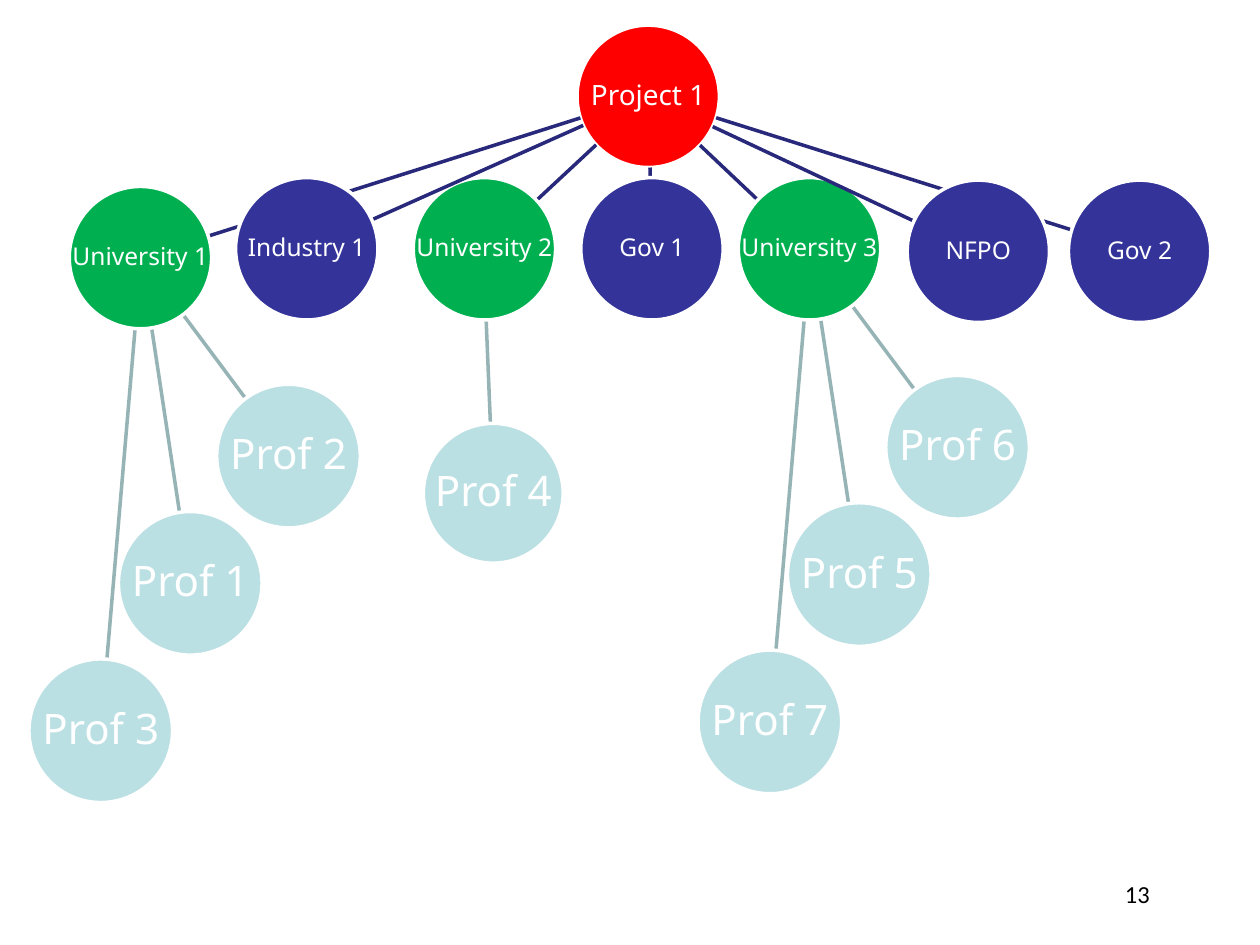
from math import hypot

from lxml.etree import SubElement
from pptx import Presentation
from pptx.dml.color import RGBColor
from pptx.enum.shapes import MSO_CONNECTOR, MSO_SHAPE
from pptx.enum.text import MSO_ANCHOR, PP_ALIGN
from pptx.oxml.ns import qn
from pptx.util import Inches, Pt

WHITE = RGBColor(0xFF, 0xFF, 0xFF)
BLACK = RGBColor(0x00, 0x00, 0x00)
RED = RGBColor(0xFF, 0x00, 0x00)
GREEN = RGBColor(0x00, 0xB0, 0x50)
BLUE = RGBColor(0x33, 0x33, 0x99)
NAVY = RGBColor(0x29, 0x29, 0x7B)
PALE_TEAL = RGBColor(0xBB, 0xE0, 0xE3)
GREY_TEAL = RGBColor(0x96, 0xB3, 0xB6)

deck = Presentation()
deck.slide_width, deck.slide_height = Inches(10), Inches(7.5)
page = deck.slides.add_slide(deck.slide_layouts[6])


def add_circle(label, corner, diameter, fill, size):
    left, top = corner
    circle = page.shapes.add_shape(
        MSO_SHAPE.OVAL, Inches(left), Inches(top), Inches(diameter), Inches(diameter))
    circle.shadow.inherit = False
    circle.fill.solid()
    circle.fill.fore_color.rgb = fill
    circle.line.color.rgb = WHITE
    circle.line.width = Pt(2)
    frame = circle.text_frame
    frame.word_wrap = False
    frame.vertical_anchor = MSO_ANCHOR.MIDDLE
    frame.margin_left = frame.margin_right = Inches(0.01)
    frame.margin_top = frame.margin_bottom = Inches(0.01)
    para = frame.paragraphs[0]
    para.alignment = PP_ALIGN.CENTER
    para.line_spacing = 0.9
    span = para.add_run()
    span.text = label
    span.font.name = "Noto Sans"
    span.font.size = Pt(size)
    span.font.color.rgb = WHITE


def add_link(start, end, diameter, color):
    """Join two circles of one size, given by their corners, from rim to rim."""
    radius = diameter / 2
    x1, y1, x2, y2 = (value + radius for value in (*start, *end))
    length = hypot(x2 - x1, y2 - y1)
    trim_x = (x2 - x1) / length * radius
    trim_y = (y2 - y1) / length * radius
    link = page.shapes.add_connector(
        MSO_CONNECTOR.STRAIGHT,
        Inches(x1 + trim_x), Inches(y1 + trim_y),
        Inches(x2 - trim_x), Inches(y2 - trim_y))
    link.line.color.rgb = color
    link.line.width = Pt(2)
    SubElement(link._element.spPr, qn("a:effectLst"))


PARTNER_DIAMETER = 1.13
project_corner = (4.58, 0.2)
partners = {
    "University 1": ((0.55, 1.48), GREEN),
    "University 2": ((3.28, 1.41), GREEN),
    "University 3": ((5.86, 1.41), GREEN),
    "Gov 1": ((4.61, 1.41), BLUE),
    "Gov 2": ((8.48, 1.43), BLUE),
    "Industry 1": ((1.87, 1.41), BLUE),
    "NFPO": ((7.2, 1.43), BLUE),
}

# Professors hang at the same offsets below both outer universities
fan = [(0.39, 2.58), (1.17, 1.57), (-0.32, 3.75)]
staff = [
    ("University 1", ["Prof 1", "Prof 2", "Prof 3"], fan, 1.14),
    ("University 3", ["Prof 5", "Prof 6", "Prof 7"], fan, 1.14),
    ("University 2", ["Prof 4"], [(0.08, 1.95)], 1.11),
]
for university, professors, offsets, diameter in staff:
    left, top = partners[university][0]
    for professor, (across, down) in zip(professors, offsets):
        corner = (left + across, top + down)
        add_link((left, top), corner, diameter, GREY_TEAL)
        add_circle(professor, corner, diameter, PALE_TEAL, 24)

add_circle("Project 1", project_corner, PARTNER_DIAMETER, RED, 16)
for partner, (corner, fill) in partners.items():
    add_link(project_corner, corner, PARTNER_DIAMETER, NAVY)
    add_circle(partner, corner, PARTNER_DIAMETER, fill, 14)

box = page.shapes.add_textbox(Inches(8.83), Inches(6.93), Inches(0.78), Inches(0.34))
box.text_frame.word_wrap = True
span = box.text_frame.paragraphs[0].add_run()
span.text = "13"
span.font.name = "Calibri"
span.font.size = Pt(14)
span.font.color.rgb = BLACK

deck.save("out.pptx")
